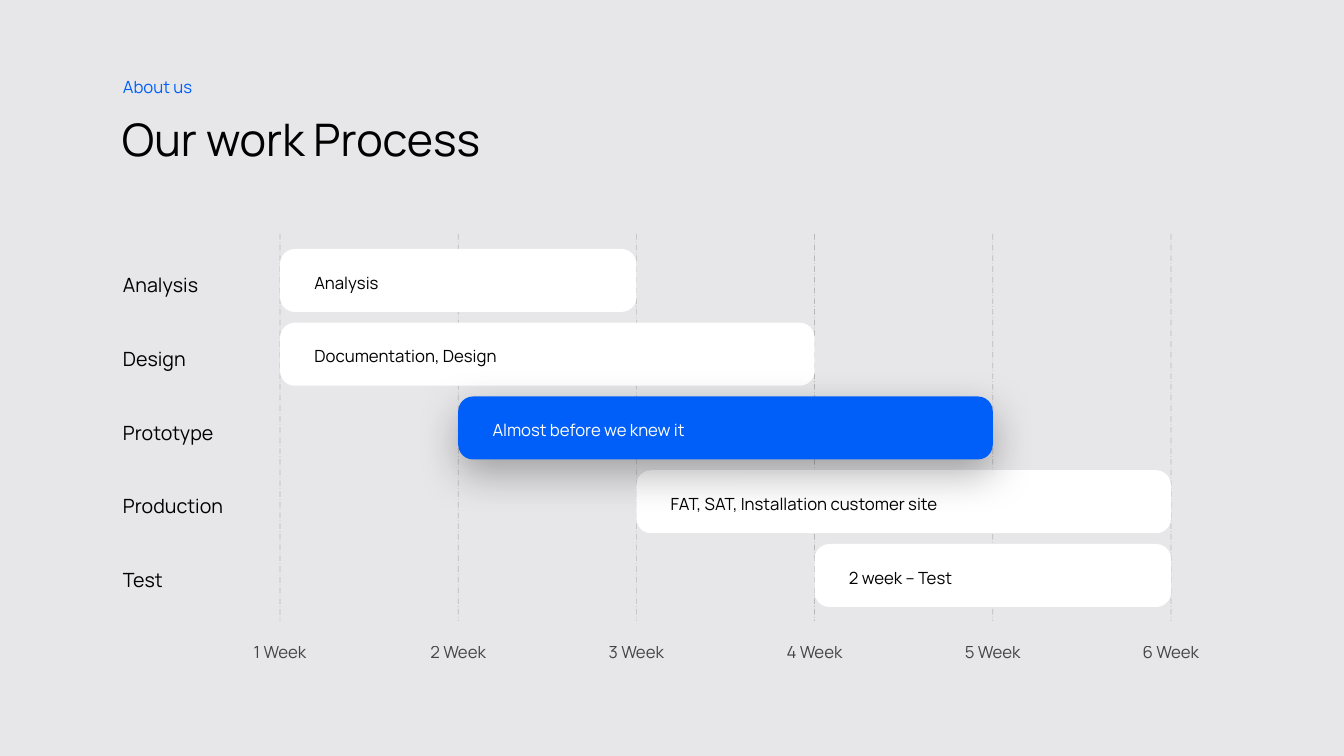
"""Build the work process slide: a six-week timeline of five stages."""
from dataclasses import dataclass

from lxml.etree import SubElement
from pptx import Presentation
from pptx.dml.color import RGBColor
from pptx.enum.dml import MSO_LINE
from pptx.enum.shapes import MSO_CONNECTOR, MSO_SHAPE
from pptx.enum.text import MSO_ANCHOR, MSO_AUTO_SIZE, PP_ALIGN
from pptx.oxml.ns import qn
from pptx.util import Pt

TITLE = "Our work Process"
TOPIC = "About us"
STAGES = [
    ("Analysis", 88, "Analysis", 1, 3, False),
    ("Design", 70, "Documentation, Design", 1, 4, False),
    ("Prototype", 100, "Almost before we knew it", 2, 5, True),
    ("Production", 112, "FAT, SAT, Installation customer site", 3, 6, False),
    ("Test", 42, "2 week – Test", 4, 6, False),
]
WEEKS = [f"{n} Week" for n in range(1, 7)]


@dataclass(frozen=True)
class Theme:
    """Hold the colours, font and type sizes."""
    back: str = "E7E7E9"
    ink: str = "000000"
    blue: str = "005FF9"
    white: str = "FFFFFF"
    font: str = "Manrope"
    head: int = 32
    label: int = 14
    small: int = 12


LOOK = Theme()
WIDE, HIGH = 1344, 756
SCALE = 12192000 / WIDE
LEFT = 123
GRID = {"left": 280, "right": 1171, "top": 234, "base": 621}
BAR = {"top": 249, "last": 544, "high": 63}


def px(*sizes):
    """Turn px lengths into EMU."""
    return [round(size * SCALE) for size in sizes]


def paint(part, values):
    """Set attributes from a dict of format values."""
    for name, value in values.items():
        setattr(part, name, value)


def fade(fill, share):
    """Give a solid fill an opacity in percent."""
    tone = next(fill.iter(qn("a:srgbClr")))
    SubElement(tone, qn("a:alpha"), val=str(share * 1000))


def write(shape, text, size, color, pad, frame, lines):
    """Put one formatted line of text into a shape."""
    body = shape.text_frame
    sides = ("margin_left", "margin_top", "margin_right", "margin_bottom")
    paint(body, dict(zip(sides, px(*pad))))
    paint(body, frame)
    para = body.paragraphs[0]
    paint(para, {"alignment": PP_ALIGN.LEFT} | lines)
    run = para.add_run()
    run.text = text
    paint(run.font, {"name": LOOK.font, "size": Pt(size), "bold": False})
    run.font.color.rgb = RGBColor.from_string(color)
    return run


def label(slide, box, text, size, color=LOOK.ink, pad=(0, 0, 0, 0), **lines):
    """Add a text box that fits its text."""
    shape = slide.shapes.add_textbox(*px(*box))
    frame = {"word_wrap": False, "auto_size": MSO_AUTO_SIZE.SHAPE_TO_FIT_TEXT}
    style = {"line_spacing": 1.3, "space_before": Pt(10)} | lines
    return write(shape, text, size, color, pad, frame, style)


def column(week):
    """Return the px place of a week line."""
    step = (GRID["right"] - GRID["left"]) / (len(WEEKS) - 1)
    return GRID["left"] + (week - 1) * step


def row(index):
    """Return the px top of a bar."""
    return BAR["top"] + index * (BAR["last"] - BAR["top"]) / (len(STAGES) - 1)


def rule(group, spot):
    """Add one dashed week line."""
    line = group.shapes.add_connector(
        MSO_CONNECTOR.STRAIGHT, *px(spot, GRID["top"], spot, GRID["base"]))
    line.line.color.rgb = RGBColor.from_string(LOOK.ink)
    paint(line.line, {"width": Pt(0.5), "dash_style": MSO_LINE.LONG_DASH_DOT})
    prop = line._element.spPr
    fade(prop, 20)
    SubElement(prop, qn("a:effectLst"))


def glow(shape):
    """Cast a soft shadow below a shape."""
    effect = shape._element.spPr.find(qn("a:effectLst"))
    cast = SubElement(effect, qn("a:outerShdw"), blurRad=str(Pt(30)),
                      dist=str(Pt(10)), dir="5400000", algn="t",
                      rotWithShape="0")
    SubElement(cast, qn("a:srgbClr"), val=LOOK.ink)
    fade(cast, 30)


def bar(slide, index, text, start, end, key):
    """Add one stage bar between two weeks."""
    box = (column(start), row(index), column(end) - column(start), BAR["high"])
    shape = slide.shapes.add_shape(MSO_SHAPE.ROUNDED_RECTANGLE, *px(*box))
    shape.adjustments[0] = 0.235
    shape.shadow.inherit = False
    shape.fill.solid()
    shape.fill.fore_color.rgb = RGBColor.from_string(
        LOOK.blue if key else LOOK.white)
    shape.line.fill.background()
    if key:
        glow(shape)
    write(shape, text, LOOK.small, LOOK.white if key else LOOK.ink,
          (30, 0, 0, 0),
          {"word_wrap": True, "vertical_anchor": MSO_ANCHOR.MIDDLE},
          {"line_spacing": 1.2, "space_before": Pt(10)})


def main():
    """Build and save the slide."""
    deck = Presentation()
    paint(deck, dict(zip(("slide_width", "slide_height"), px(WIDE, HIGH))))
    slide = deck.slides.add_slide(deck.slide_layouts[5])
    slide.background.fill.solid()
    slide.background.fill.fore_color.rgb = RGBColor.from_string(LOOK.back)

    label(slide, (LEFT, 68, 85, 33), TOPIC, LOOK.small, LOOK.blue,
          (0, 5, 10, 5), line_spacing=1.2)
    title = slide.shapes.title
    paint(title, dict(zip(("left", "top", "width", "height"),
                          px(122, 101, 1094, 76))))
    write(title, TITLE, LOOK.head, LOOK.ink, (0, 10, 10, 5),
          {"word_wrap": False, "auto_size": MSO_AUTO_SIZE.NONE,
           "vertical_anchor": MSO_ANCHOR.MIDDLE},
          {"line_spacing": 0.9, "space_before": Pt(0)})

    group = slide.shapes.add_group_shape()
    for week, text in enumerate(WEEKS, 1):
        rule(group, column(week))
        run = label(slide, (column(week) - 30, 636, 60, 24), text, LOOK.small,
                    alignment=PP_ALIGN.CENTER)
        fade(run._r, 70)

    for index, (name, wide, *_) in enumerate(STAGES):
        label(slide, (LEFT, row(index) + 17, wide, 28), name, LOOK.label)
    for index, stage in sorted(enumerate(STAGES), key=lambda pair: pair[1][-1]):
        bar(slide, index, *stage[2:])
    deck.save("out.pptx")


if __name__ == "__main__":
    main()
